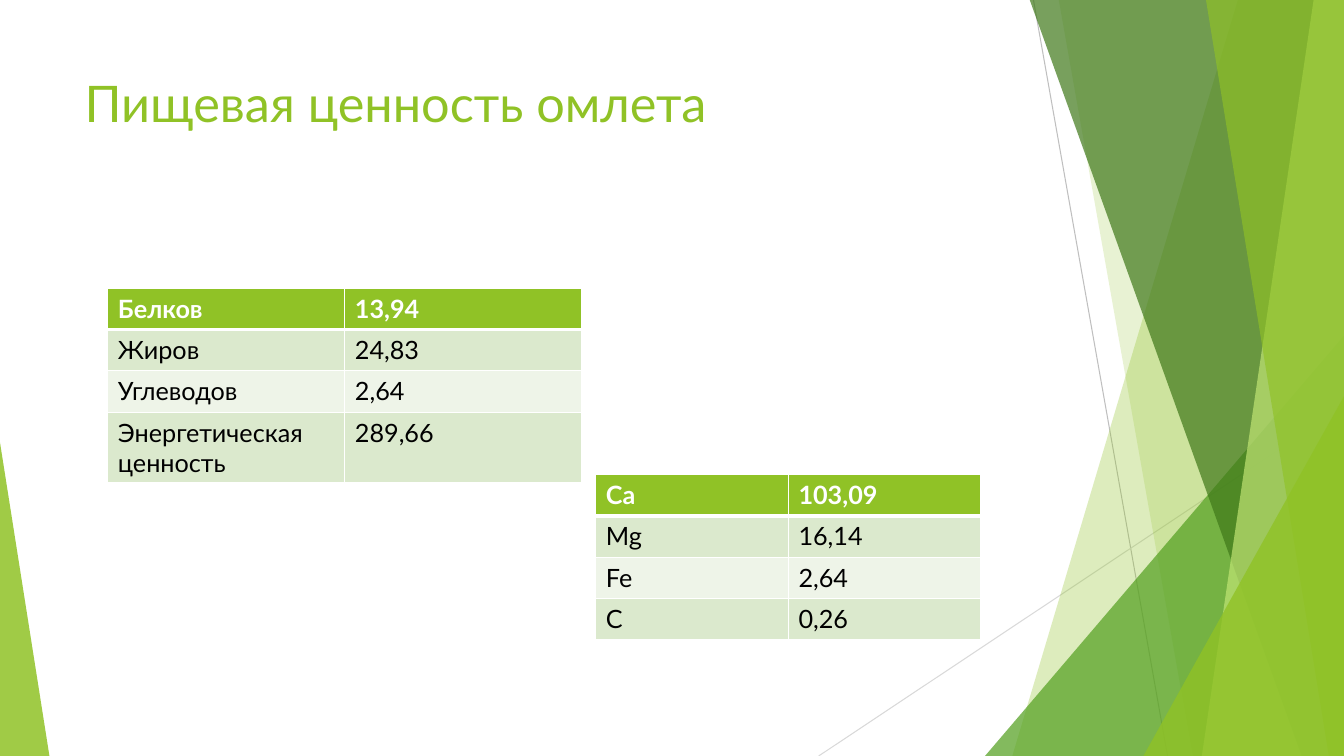
from lxml import etree
from pptx import Presentation
from pptx import util as u
from pptx.dml.color import RGBColor
from pptx.enum import shapes, text
from pptx.oxml import ns

WIDE, HIGH, TOP = 13.33, 7.5, -0.01
HUES = {
    "lime": "90C226", "leaf": "54A021", "moss": "3F7819", "pale": "C0E474",
    "gray": "BFBFBF", "mist": "D9D9D9", "odd": "DBE9CD", "even": "EEF4E8",
    "white": "FFFFFF", "black": "000000",
}


class Deck:
    font = "Lato"

    def __init__(self):
        self.deck = Presentation()
        self.deck.slide_width = u.Inches(WIDE)
        self.deck.slide_height = u.Inches(HIGH)
        self.slide = self.deck.slides.add_slide(self.deck.slide_layouts[6])
        self.items = self.slide.shapes

    def color(self, hue):
        return RGBColor.from_string(HUES[hue])

    def sub(self, node, tag, **attrs):
        return etree.SubElement(node, ns.qn(tag), **attrs)

    def paint(self, shape, hue, alpha):
        shape.shadow.inherit = False
        shape.line.fill.background()
        shape.fill.solid()
        shape.fill.fore_color.rgb = self.color(hue)
        tone = shape._element.spPr.find(".//" + ns.qn("a:srgbClr"))
        self.sub(tone, "a:alpha", val=str(alpha * 1000))

    def line(self, x1, y1, x2, y2, hue):
        ends = [u.Inches(v) for v in (x1, y1, x2, y2)]
        line = self.items.add_connector(shapes.MSO_CONNECTOR.STRAIGHT, *ends)
        line.line.width = u.Pt(0.75)
        line.line.color.rgb = self.color(hue)
        self.sub(line._element.spPr, "a:effectLst")

    def band(self, top, low, hue, alpha):
        spots = [(top, TOP), (WIDE, TOP), (WIDE, HIGH), (low, HIGH)]
        spots = [(u.Inches(x), u.Inches(y)) for x, y in spots]
        form = self.items.build_freeform(*spots[0])
        form.add_line_segments(spots[1:], close=True)
        self.paint(form.convert_to_shape(), hue, alpha)

    def wedge(self, x, y, w, tip, hue, alpha):
        box = [u.Inches(v) for v in (x, y, w, HIGH - y)]
        shape = self.items.add_shape(shapes.MSO_SHAPE.ISOSCELES_TRIANGLE, *box)
        shape.adjustments[0] = tip
        self.paint(shape, hue, alpha)

    def put(self, frame, words, size, hue, bold=False):
        run = frame.paragraphs[0].add_run()
        run.text = words
        run.font.name = self.font
        run.font.size = u.Pt(size)
        run.font.bold = bold
        run.font.color.rgb = self.color(hue)

    def title(self, words, x, y, w, h):
        box = self.items.add_textbox(*[u.Inches(v) for v in (x, y, w, h)])
        frame = box.text_frame
        frame.word_wrap = True
        frame.vertical_anchor = text.MSO_ANCHOR.TOP
        self.put(frame, words, 36, "lime")

    def edge(self, cell, side, width):
        props = cell._tc.get_or_add_tcPr()
        line = self.sub(props, "a:ln" + side, w=str(u.Pt(width)))
        fill = self.sub(line, "a:solidFill")
        self.sub(fill, "a:srgbClr", val=HUES["white"])

    def table(self, x, y, col, rows, row=0.41):
        wide, high = col * len(rows[0]), row * len(rows)
        box = [u.Inches(v) for v in (x, y, wide, high)]
        grid = self.items.add_table(len(rows), len(rows[0]), *box).table
        for i, line in enumerate(rows):
            grid.rows[i].height = u.Inches(row)
            for j, words in enumerate(line):
                cell = grid.cell(i, j)
                head = i == 0
                for side in "LRTB":
                    thick = (head and side == "B") or (i == 1 and side == "T")
                    self.edge(cell, side, 3 if thick else 1)
                cell.fill.solid()
                fill = "lime" if head else "odd" if i % 2 else "even"
                cell.fill.fore_color.rgb = self.color(fill)
                hue = "white" if head else "black"
                self.put(cell.text_frame, words, 18, hue, head)


def main():
    deck = Deck()
    deck.line(10.25, 0, 11.58, HIGH, "gray")
    deck.line(WIDE, 4.03, 8.12, HIGH, "mist")
    deck.band(12.28, 10.04, "lime", 30)
    deck.band(10.5, 11.83, "lime", 20)
    deck.wedge(9.77, 3.33, 3.56, 1, "leaf", 72)
    deck.band(10.21, 12.91, "moss", 70)
    deck.band(13.03, 11.92, "pale", 70)
    deck.band(11.96, 13.18, "lime", 65)
    deck.wedge(11.34, 3.93, 1.99, 1, "lime", 80)
    deck.wedge(0, 4.39, 0.49, 0, "lime", 85)
    deck.title("Пищевая ценность омлета", 0.74, 0.67, 9.4, 1.44)
    deck.table(1.07, 2.86, 2.35, [
        ("Белков", "13,94"),
        ("Жиров", "24,83"),
        ("Углеводов", "2,64"),
        ("Энергетическая ценность", "289,66"),
    ])
    deck.table(5.91, 4.71, 1.91, [
        ("Ca", "103,09"),
        ("Mg", "16,14"),
        ("Fe", "2,64"),
        ("C", "0,26"),
    ])
    deck.deck.save("out.pptx")


if __name__ == "__main__":
    main()
